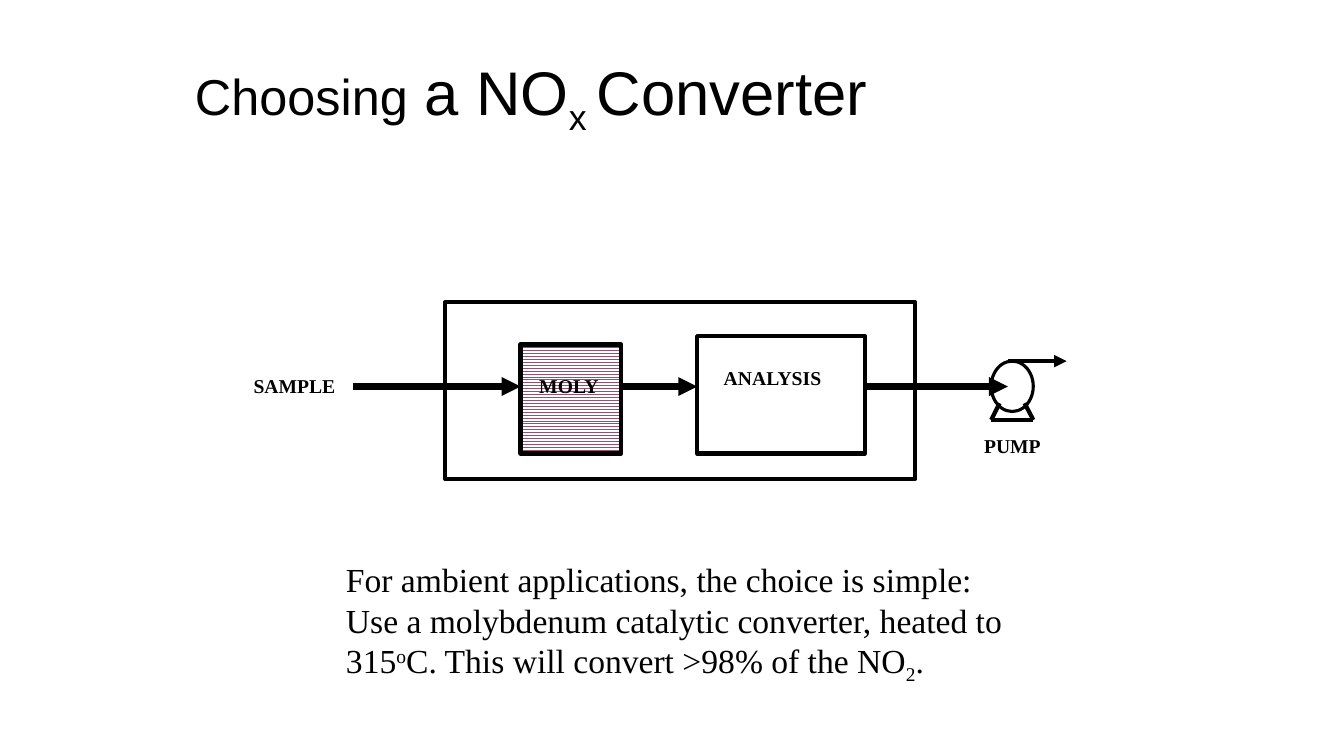
from dataclasses import dataclass

from lxml import etree
from pptx import Presentation
from pptx.dml.color import RGBColor
from pptx.enum import dml, shapes, text
from pptx.oxml import ns
from pptx.util import Cm, Pt


@dataclass(frozen=True)
class Theme:
    ink: RGBColor = RGBColor(0, 0, 0)
    paper: RGBColor = RGBColor(255, 255, 255)
    catalyst: RGBColor = RGBColor(0x95, 0x4F, 0x72)
    title_font: str = "Arial"
    body_font: str = "Times New Roman"
    title_small: float = 36
    title_large: float = 44
    body: float = 24
    label: float = 14
    outline: float = 3
    flow: float = 4.5
    pump_outline: float = 2.25


@dataclass(frozen=True)
class Box:
    left: float
    top: float
    width: float
    height: float

    def lengths(self):
        return Cm(self.left), Cm(self.top), Cm(self.width), Cm(self.height)


@dataclass(frozen=True)
class Line:
    x1: float
    y1: float
    x2: float
    y2: float
    weight: float
    arrow: bool = False


@dataclass(frozen=True)
class Words:
    text: str
    size: float
    baseline: int = 0
    bold: bool = False


@dataclass(frozen=True)
class Label:
    text: str
    left: float
    top: float
    width: float


THEME = Theme()
FLOW_Y = 9.74
LABEL_HEIGHT = 0.85

TITLE = [
    Words("Choosing", THEME.title_small),
    Words(" a NO", THEME.title_large),
    Words("x ", THEME.title_large, -25000),
    Words("Converter", THEME.title_large),
]
ADVICE = [
    Words("For ambient applications, the choice is simple: Use a molybdenum "
          "catalytic converter, heated to 315", THEME.body),
    Words("o", THEME.body, 30000),
    Words("C. This will convert >98% of the NO", THEME.body),
    Words("2", THEME.body, -25000),
    Words(".", THEME.body),
]

ANALYZER = Box(11.22, 7.62, 11.85, 4.45)
CONVERTER = Box(13.12, 8.68, 2.54, 2.75)
ANALYSIS = Box(17.57, 8.47, 4.23, 2.96)
PUMP = Box(24.98, 9.1, 1.06, 1.27)

FLOWS = [
    Line(x1, FLOW_Y, x2, FLOW_Y, THEME.flow, arrow=True)
    for x1, x2 in [
        (8.89, CONVERTER.left),
        (CONVERTER.left + CONVERTER.width, ANALYSIS.left),
        (ANALYSIS.left + ANALYSIS.width, 25.4),
    ]
]
PUMP_LINES = [
    Line(25.19, 10.16, 24.98, 10.58, THEME.outline),
    Line(25.82, 10.16, 26.04, 10.58, THEME.outline),
    Line(24.98, 10.58, 26.04, 10.58, THEME.outline),
    Line(25.4, 9.1, 26.88, 9.1, THEME.outline, arrow=True),
]
LABELS = [
    Label("MOLY", 13.34, 9.31, 2.12),
    Label("ANALYSIS", 17.99, 9.1, 3.6),
    Label("PUMP", 24.55, 10.8, 2.33),
    Label("SAMPLE", 6.14, 9.31, 2.96),
]


def write(paragraph, words: list[Words], font: str) -> None:
    paragraph.alignment = text.PP_ALIGN.LEFT
    for part in words:
        run = paragraph.add_run()
        run.text = part.text
        run.font.name = font
        run.font.size = Pt(part.size)
        run.font.bold = part.bold
        run.font.color.rgb = THEME.ink
        if part.baseline:
            run.font._element.set("baseline", str(part.baseline))


def add_text(slide, box: Box, words: list[Words]) -> None:
    frame = slide.shapes.add_textbox(*box.lengths()).text_frame
    frame.word_wrap = True
    frame.auto_size = text.MSO_AUTO_SIZE.SHAPE_TO_FIT_TEXT
    write(frame.paragraphs[0], words, THEME.body_font)


def add_outline(parent, kind, box: Box, weight: float):
    """Add a black-outlined shape and return it for filling."""
    shape = parent.add_shape(kind, *box.lengths())
    shape.shadow.inherit = False
    shape.line.color.rgb = THEME.ink
    shape.line.width = Pt(weight)
    return shape


def add_block(slide, box: Box):
    block = add_outline(slide.shapes, shapes.MSO_SHAPE.RECTANGLE, box, THEME.outline)
    block.fill.solid()
    block.fill.fore_color.rgb = THEME.paper
    return block


def add_line(parent, line: Line) -> None:
    connector = parent.add_connector(
        shapes.MSO_CONNECTOR.STRAIGHT,
        Cm(line.x1), Cm(line.y1), Cm(line.x2), Cm(line.y2))
    connector.line.color.rgb = THEME.ink
    connector.line.width = Pt(line.weight)
    if line.arrow:
        etree.SubElement(connector.line._get_or_add_ln(), ns.qn("a:tailEnd"),
                         type="triangle")
    etree.SubElement(connector._element.spPr, ns.qn("a:effectLst"))


def add_title(slide) -> None:
    title = slide.shapes.title
    title.left, title.top, title.width, title.height = Box(4.66, 0.74, 22.86, 3.18).lengths()
    frame = title.text_frame
    frame.auto_size = text.MSO_AUTO_SIZE.NONE
    frame.vertical_anchor = text.MSO_ANCHOR.MIDDLE
    frame.paragraphs[0].line_spacing = 0.9
    write(frame.paragraphs[0], TITLE, THEME.title_font)


def add_converter(slide) -> None:
    fill = add_block(slide, CONVERTER).fill
    fill.patterned()
    fill.pattern = dml.MSO_PATTERN.ZIG_ZAG
    fill.fore_color.rgb = THEME.catalyst
    fill.back_color.rgb = THEME.paper


def add_pump(slide) -> None:
    pump = slide.shapes.add_group_shape().shapes
    add_outline(pump, shapes.MSO_SHAPE.OVAL, PUMP, THEME.pump_outline).fill.background()
    for line in PUMP_LINES:
        add_line(pump, line)


def main() -> None:
    deck = Presentation()
    deck.slide_width, deck.slide_height = Cm(33.87), Cm(19.05)
    slide = deck.slides.add_slide(deck.slide_layouts[5])
    add_title(slide)
    add_text(slide, Box(8.47, 13.97, 17.36, 3.32), ADVICE)
    add_block(slide, ANALYZER)
    add_converter(slide)
    add_block(slide, ANALYSIS)
    add_pump(slide)
    for flow in FLOWS:
        add_line(slide.shapes, flow)
    for label in LABELS:
        add_text(slide, Box(label.left, label.top, label.width, LABEL_HEIGHT),
                 [Words(label.text, THEME.label, bold=True)])
    deck.save("out.pptx")


if __name__ == "__main__":
    main()
